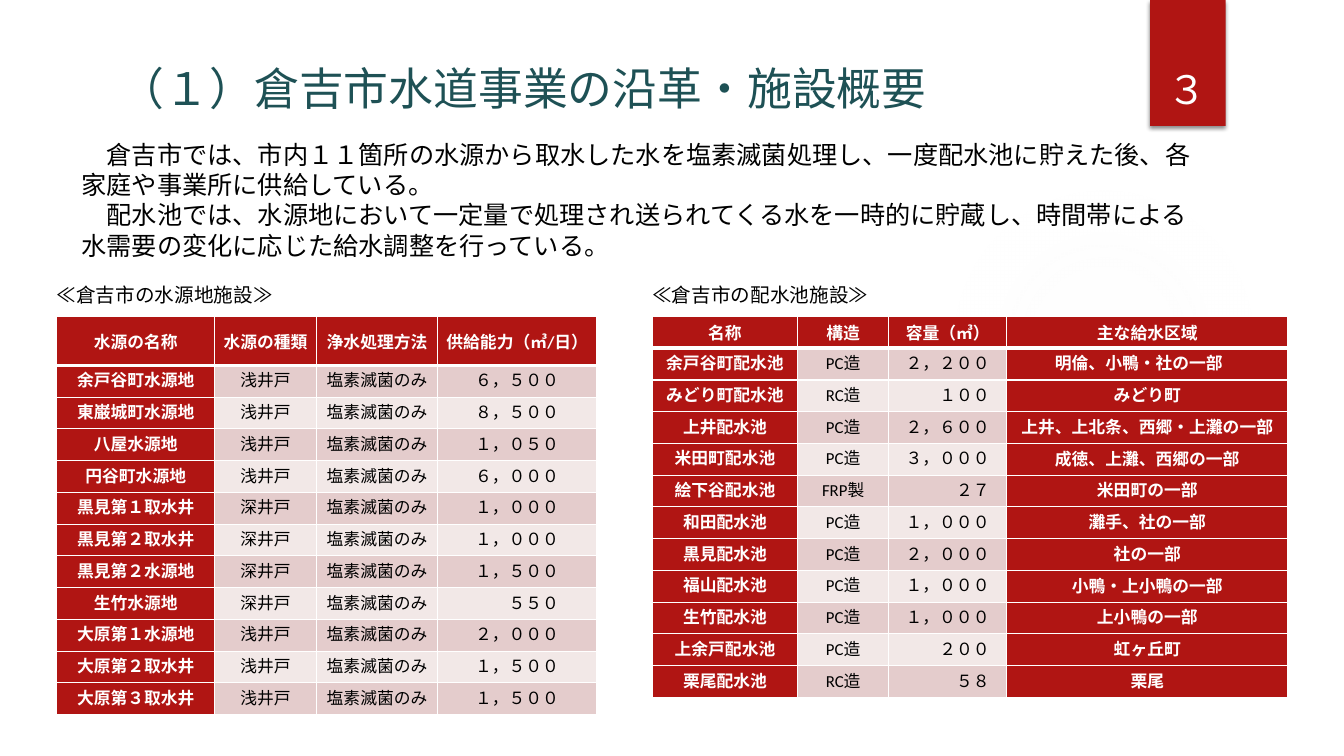
"""Build the slide on the history and facilities of the Kurayoshi water supply."""
from lxml import etree
from pptx import Presentation
from pptx.dml.color import RGBColor
from pptx.enum.shapes import MSO_SHAPE
from pptx.enum.text import MSO_ANCHOR, PP_ALIGN
from pptx.oxml import parse_xml
from pptx.oxml.ns import qn
from pptx.util import Pt

LEFT, CENTER, RIGHT = PP_ALIGN.LEFT, PP_ALIGN.CENTER, PP_ALIGN.RIGHT
MIDDLE, BOTTOM = MSO_ANCHOR.MIDDLE, MSO_ANCHOR.BOTTOM
NS = 'xmlns:a="http://schemas.openxmlformats.org/drawingml/2006/main"'
RED, WHITE, BLACK, TEAL = "B01513", "FFFFFF", "000000", "1E5155"
BANDS = ("E4CCCC", "F2E8E7")
ROW_H, CELL_SIZE, DIGITS = 22.68, 12, 5

TITLE = "（１）倉吉市水道事業の沿革・施設概要"
PAGE = "３"
INTRO = [
    "倉吉市では、市内１１箇所の水源から取水した水を塩素滅菌処理し、一度配水池に貯えた後、各家庭や事業所に供給している。",
    "配水池では、水源地において一定量で処理され送られてくる水を一時的に貯蔵し、時間帯による水需要の変化に応じた給水調整を行っている。",
]
METHOD = "塩素滅菌のみ"
SOURCES = [
    ("水源の名称", "水源の種類", "浄水処理方法", "供給能力（㎥/日）"),
    ("余戸谷町水源地", "浅井戸", METHOD, "６，５００"),
    ("東巌城町水源地", "浅井戸", METHOD, "８，５００"),
    ("八屋水源地", "浅井戸", METHOD, "１，０５０"),
    ("円谷町水源地", "浅井戸", METHOD, "６，０００"),
    ("黒見第１取水井", "深井戸", METHOD, "１，０００"),
    ("黒見第２取水井", "深井戸", METHOD, "１，０００"),
    ("黒見第２水源地", "深井戸", METHOD, "１，５００"),
    ("生竹水源地", "深井戸", METHOD, "５５０"),
    ("大原第１水源地", "浅井戸", METHOD, "２，０００"),
    ("大原第２取水井", "浅井戸", METHOD, "１，５００"),
    ("大原第３取水井", "浅井戸", METHOD, "１，５００"),
]
RESERVOIRS = [
    ("名称", "構造", "容量（㎥）", "主な給水区域"),
    ("余戸谷町配水池", "PC造", "２，２００", "明倫、小鴨・社の一部　"),
    ("みどり町配水池", "RC造", "１００", "みどり町"),
    ("上井配水池", "PC造", "２，６００", "上井、上北条、西郷・上灘の一部"),
    ("米田町配水池", "PC造", "３，０００", "成徳、上灘、西郷の一部"),
    ("絵下谷配水池", "FRP製", "２７", "米田町の一部"),
    ("和田配水池", "PC造", "１，０００", "灘手、社の一部"),
    ("黒見配水池", "PC造", "２，０００", "社の一部"),
    ("福山配水池", "PC造", "１，０００", "小鴨・上小鴨の一部"),
    ("生竹配水池", "PC造", "１，０００", "上小鴨の一部"),
    ("上余戸配水池", "PC造", "２００", "虹ヶ丘町"),
    ("栗尾配水池", "RC造", "５８", "栗尾"),
]
TABLES = [
    dict(rows=SOURCES, x=40.5, widths=(112.6, 72.9, 86.4, 113.8), header_h=35,
         heads=(0,), number=3, caption="≪倉吉市の水源地施設≫", caption_w=168.5),
    dict(rows=RESERVOIRS, x=466, widths=(103.4, 65.4, 84.2, 200.8), header_h=ROW_H,
         heads=(0, 3), number=2, caption="≪倉吉市の配水池施設≫", caption_w=158.5),
]
CAPTION_Y, CAPTION_H = 195.8, 30.2
TABLE_Y = CAPTION_Y + CAPTION_H


def color(value):
    return RGBColor.from_string(value)


def write(tf, texts, size=CELL_SIZE, fill=BLACK, font="Calibri", bold=False,
          align=LEFT, indent=0, spacing=None):
    tf.word_wrap = True
    for i, text in enumerate(texts):
        p = tf.add_paragraph() if i else tf.paragraphs[0]
        p.alignment = align
        if spacing:
            p.line_spacing = spacing
        if indent:
            p._p.get_or_add_pPr().set("indent", str(Pt(indent)))
        r = p.add_run()
        r.text = text
        r.font.size, r.font.bold, r.font.name = Pt(size), bold, font
        r.font.color.rgb = color(fill)
        ea = etree.SubElement(r._r.get_or_add_rPr(), qn("a:ea"))
        ea.set("typeface", font)


def add_text(s, box, texts, **fmt):
    tf = s.shapes.add_textbox(*map(Pt, box)).text_frame
    tf.vertical_anchor = BOTTOM
    write(tf, texts, **fmt)


def add_shape(s, kind, box):
    sp = s.shapes.add_shape(kind, *map(Pt, box))
    sp.line.fill.background()
    return sp


def add_grid(s, x, y, widths, heights):
    frame = s.shapes.add_table(len(heights), len(widths), Pt(x), Pt(y),
                               Pt(sum(widths)), Pt(sum(heights)))
    table = frame.table
    table.first_row = table.horz_banding = False
    for column, w in zip(table.columns, widths):
        column.width = Pt(w)
    for row, h in zip(table.rows, heights):
        row.height = Pt(h)
    return table


def set_margins(cell, left, right):
    cell.margin_left, cell.margin_right = Pt(left), Pt(right)
    cell.margin_top = cell.margin_bottom = 0
    cell.vertical_anchor = MIDDLE


def set_borders(cell, top, bottom):
    tcPr = cell._tc.get_or_add_tcPr()
    for i, (side, w) in enumerate(zip("LRTB", (1, 1, top, bottom))):
        tcPr.insert(i, parse_xml(
            f'<a:ln{side} {NS} w="{Pt(w)}"><a:solidFill><a:srgbClr val="{WHITE}"/>'
            f'</a:solidFill></a:ln{side}>'))


def add_facilities(s, rows, x, widths, header_h, heads, number, caption, caption_w):
    heights = [header_h] + [ROW_H] * (len(rows) - 1)
    table = add_grid(s, x, TABLE_Y, widths, heights)
    for i, row in enumerate(rows):
        for j, text in enumerate(row):
            cell = table.cell(i, j)
            strong = i == 0 or j in heads
            is_number = i > 0 and j == number
            side = (widths[j] - DIGITS * CELL_SIZE) / 2
            set_margins(cell, 5.4, side if is_number else 5)
            cell.fill.solid()
            cell.fill.fore_color.rgb = color(RED if strong else BANDS[(i - 1) % 2])
            set_borders(cell, 3 if i == 1 else 1, 3 if i == 0 else 1)
            write(cell.text_frame, [text], fill=WHITE if strong else BLACK, bold=strong,
                  font="Arial" if j in heads and j else "Calibri",
                  align=RIGHT if is_number else CENTER, spacing=None if i else 1.15)
    cell = add_grid(s, x, CAPTION_Y, [caption_w], [CAPTION_H]).cell(0, 0)
    set_margins(cell, 0, 0)
    cell.fill.background()
    write(cell.text_frame, [caption], size=14, font="Arial")


def main():
    prs = Presentation()
    prs.slide_width, prs.slide_height = Pt(960), Pt(540)
    s = prs.slides.add_slide(prs.slide_layouts[6])

    glow = add_shape(s, MSO_SHAPE.OVAL, (677.5, 131.8, 221.8, 221.8))
    glow.shadow.inherit = False
    stops = "".join(
        f'<a:gs pos="{pos}000"><a:srgbClr val="F3F3F3"><a:alpha val="{alpha}000"/>'
        f'</a:srgbClr></a:gs>' for pos, alpha in ((0, 7), (36, 6), (69, 0)))
    glow._element.spPr.find(qn("a:prstGeom")).addnext(parse_xml(
        f'<a:gradFill {NS}><a:gsLst>{stops}</a:gsLst><a:path path="circle">'
        '<a:fillToRect l="50000" t="50000" r="50000" b="50000"/></a:path></a:gradFill>'))

    ribbon = add_shape(s, MSO_SHAPE.RECTANGLE, (821.5, 0, 54, 90))
    ribbon.fill.solid()
    ribbon.fill.fore_color.rgb = color(RED)
    ribbon._element.spPr.append(parse_xml(
        f'<a:effectLst {NS}><a:outerShdw blurRad="{Pt(3)}" dist="{Pt(2)}" dir="5400000">'
        f'<a:srgbClr val="{BLACK}"><a:alpha val="45000"/></a:srgbClr>'
        '</a:outerShdw></a:effectLst>'))

    add_text(s, (815, 23, 66.2, 60.5), [PAGE], size=28, fill=WHITE, align=CENTER)
    add_text(s, (51.1, 92.2, 815.8, 97.2), INTRO, size=18, indent=18)
    for facilities in TABLES:
        add_facilities(s, **facilities)
    add_text(s, (78.5, 25.2, 694.8, 60.5), [TITLE], size=32, fill=TEAL)
    prs.save("out.pptx")


if __name__ == "__main__":
    main()
